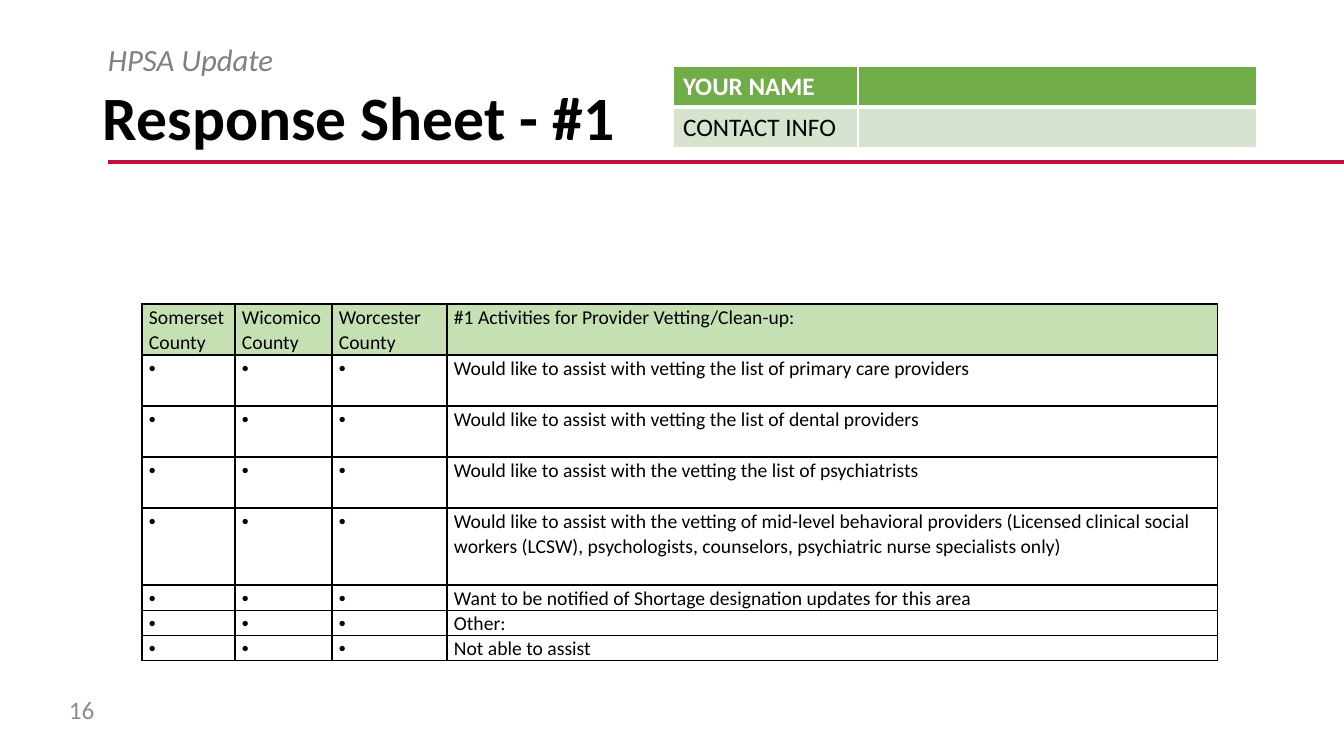
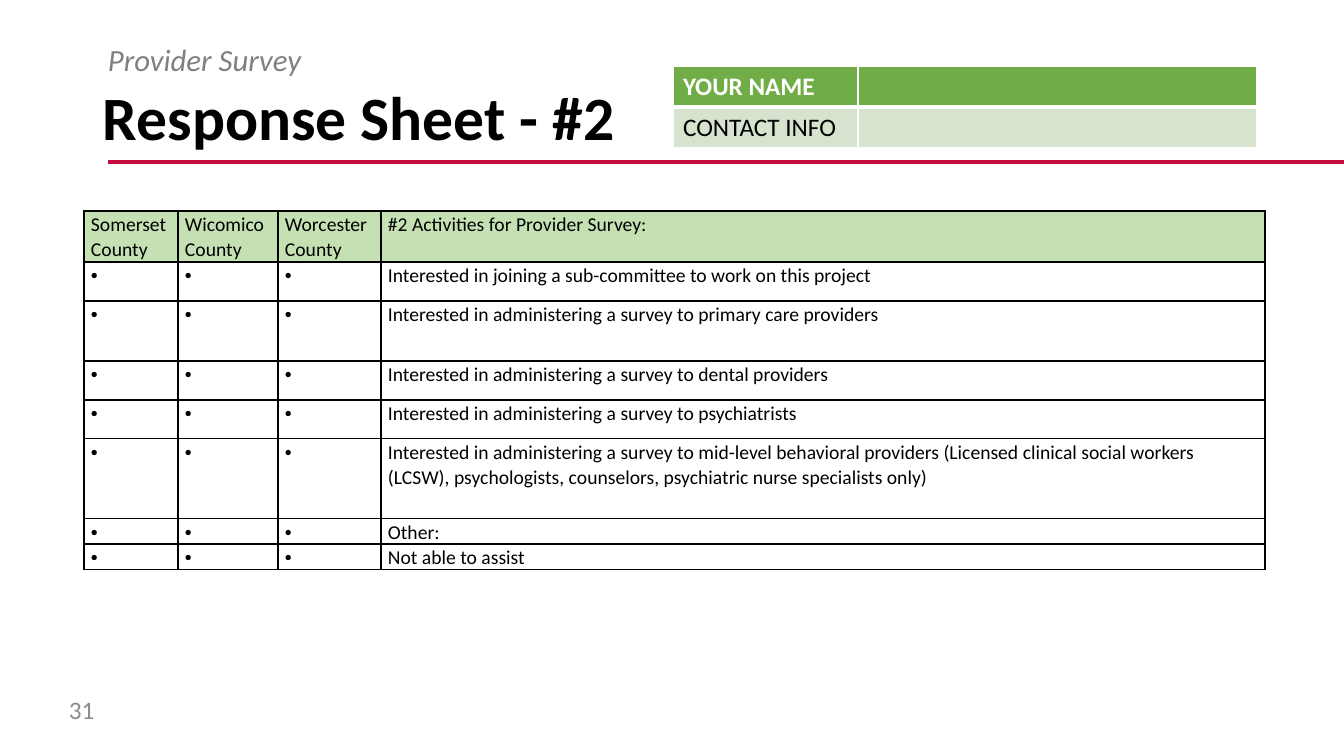
from lxml.etree import SubElement
from pptx import Presentation
from pptx.dml.color import RGBColor
from pptx.enum.shapes import MSO_CONNECTOR
from pptx.enum.text import MSO_ANCHOR
from pptx.oxml.ns import qn
from pptx.util import Emu, Pt

FONT = "Calibri"
BLACK, WHITE, GREY, PALE = "000000", "FFFFFF", "808080", "8C8C8C"
RED, GREEN, MINT, LEAF = "C40E3E", "70AD47", "D5E3CF", "C5E0B3"
BLANK = chr(160)

HEADS = ["Somerset County", "Wicomico County", "Worcester County"]
CONTACT = [("YOUR NAME", GREEN, WHITE, True),
           ("CONTACT INFO", MINT, BLACK, False)]
SHEETS = [
    {
        "topic": "HPSA Update",
        "title": "Response Sheet - #1",
        "number": "16",
        "at": (142, 304),
        "cols": [93, 97, 115, 771],
        "head": "#1 Activities for Provider Vetting/Clean-up:",
        "rows": [
            ("Would like to assist with vetting the list of primary care providers", 51),
            ("Would like to assist with vetting the list of dental providers", 51),
            ("Would like to assist with the vetting the list of psychiatrists", 51),
            ("Would like to assist with the vetting of mid-level behavioral providers "
             "(Licensed clinical social workers (LCSW), psychologists, counselors, "
             "psychiatric nurse specialists only)", 77),
            ("Want to be notified of Shortage designation updates for this area", 25),
            ("Other:", 25),
            ("Not able to assist", 25),
        ],
    },
    {
        "topic": "Provider Survey",
        "title": "Response Sheet - #2",
        "number": "31",
        "at": (84, 211),
        "cols": [94, 100, 103, 884],
        "head": "#2 Activities for Provider Survey:",
        "rows": [
            ("Interested in joining a sub-committee to work on this project", 39),
            ("Interested in administering a survey to primary care providers", 60),
            ("Interested in administering a survey to dental providers", 39),
            ("Interested in administering a survey to psychiatrists", 39),
            ("Interested in administering a survey to mid-level behavioral providers "
             "(Licensed clinical social workers (LCSW), psychologists, counselors, "
             "psychiatric nurse specialists only)", 80),
            ("Other:", 25),
            ("Not able to assist", 25),
        ],
    },
]


def px(n):
    return Emu(round(n * 914400 / 100.8))


def color(code):
    return RGBColor.from_string(code)


def write(frame, text, size, ink, bold=False, italic=False, lead=None):
    frame.text = text
    para = frame.paragraphs[0]
    if lead:
        para.line_spacing = lead
    for run in para.runs:
        font = run.font
        font.name, font.size = FONT, Pt(size)
        font.bold, font.italic = bold, italic
        font.color.rgb = color(ink)
    return para


def label(slide, box, text, size, ink, anchor=MSO_ANCHOR.MIDDLE, **style):
    frame = slide.shapes.add_textbox(*map(px, box)).text_frame
    frame.word_wrap = True
    frame.vertical_anchor = anchor
    write(frame, text, size, ink, **style)


def border(cell, ink, **widths):
    props = cell._tc.get_or_add_tcPr()
    for side in "LRTB":
        line = SubElement(props, qn("a:ln" + side), w=str(Pt(widths.get(side, 1))))
        fill = SubElement(line, qn("a:solidFill"))
        SubElement(fill, qn("a:srgbClr"), val=ink)


def paint(cell, code):
    cell.fill.solid()
    cell.fill.fore_color.rgb = color(code)


def bullet(para):
    props = para._p.get_or_add_pPr()
    props.set("marL", str(px(29)))
    props.set("indent", str(-px(29)))
    SubElement(props, qn("a:buFont"), typeface="Arial")
    SubElement(props, qn("a:buChar"), char="•")


def grid(slide, at, cols, rows):
    box = (*at, sum(cols), sum(rows))
    table = slide.shapes.add_table(len(rows), len(cols), *map(px, box)).table
    table.horz_banding = False
    for col, wide in zip(table.columns, cols):
        col.width = px(wide)
    for row, high in zip(table.rows, rows):
        row.height = px(high)
    return table


def contact(slide):
    table = grid(slide, (673, 66), [185, 399], [41, 41])
    for r, (text, fill, ink, bold) in enumerate(CONTACT):
        edge = {"T": 3} if r else {"B": 3}
        for cell in table.rows[r].cells:
            border(cell, WHITE, **edge)
            paint(cell, fill)
        write(table.cell(r, 0).text_frame, text, 18, ink, bold)


def survey(slide, sheet):
    texts = [sheet["head"]] + [text for text, _ in sheet["rows"]]
    highs = [51] + [high for _, high in sheet["rows"]]
    table = grid(slide, sheet["at"], sheet["cols"], highs)
    for r, text in enumerate(texts):
        marks = [BLANK] * len(HEADS) if r else HEADS
        for c, word in enumerate([*marks, text]):
            cell = table.cell(r, c)
            cell.margin_left = cell.margin_right = px(7)
            cell.margin_top = cell.margin_bottom = 0
            border(cell, BLACK)
            if r:
                cell.fill.background()
            else:
                paint(cell, LEAF)
            para = write(cell.text_frame, word, 14, BLACK, lead=1.07)
            if word == BLANK:
                bullet(para)


def base(slide, sheet):
    ends = map(px, (108, 162, 1344, 162))
    rule = slide.shapes.add_connector(MSO_CONNECTOR.STRAIGHT, *ends)
    rule.line.color.rgb = color(RED)
    rule.line.width = Pt(2.25)
    SubElement(rule._element.spPr, qn("a:effectLst"))
    label(slide, (93, 66, 570, 110), sheet["title"], 44, BLACK, bold=True, lead=0.9)
    label(slide, (59, 689, 59, 40), sheet["number"], 18, PALE)
    label(slide, (98, 40, 560, 38), sheet["topic"], 22, GREY,
          MSO_ANCHOR.TOP, italic=True, lead=0.9)
    contact(slide)


def main():
    deck = Presentation()
    deck.slide_width, deck.slide_height = px(1344), px(756)
    for sheet in SHEETS:
        slide = deck.slides.add_slide(deck.slide_layouts[6])
        base(slide, sheet)
        survey(slide, sheet)
    deck.save("out.pptx")


if __name__ == "__main__":
    main()
